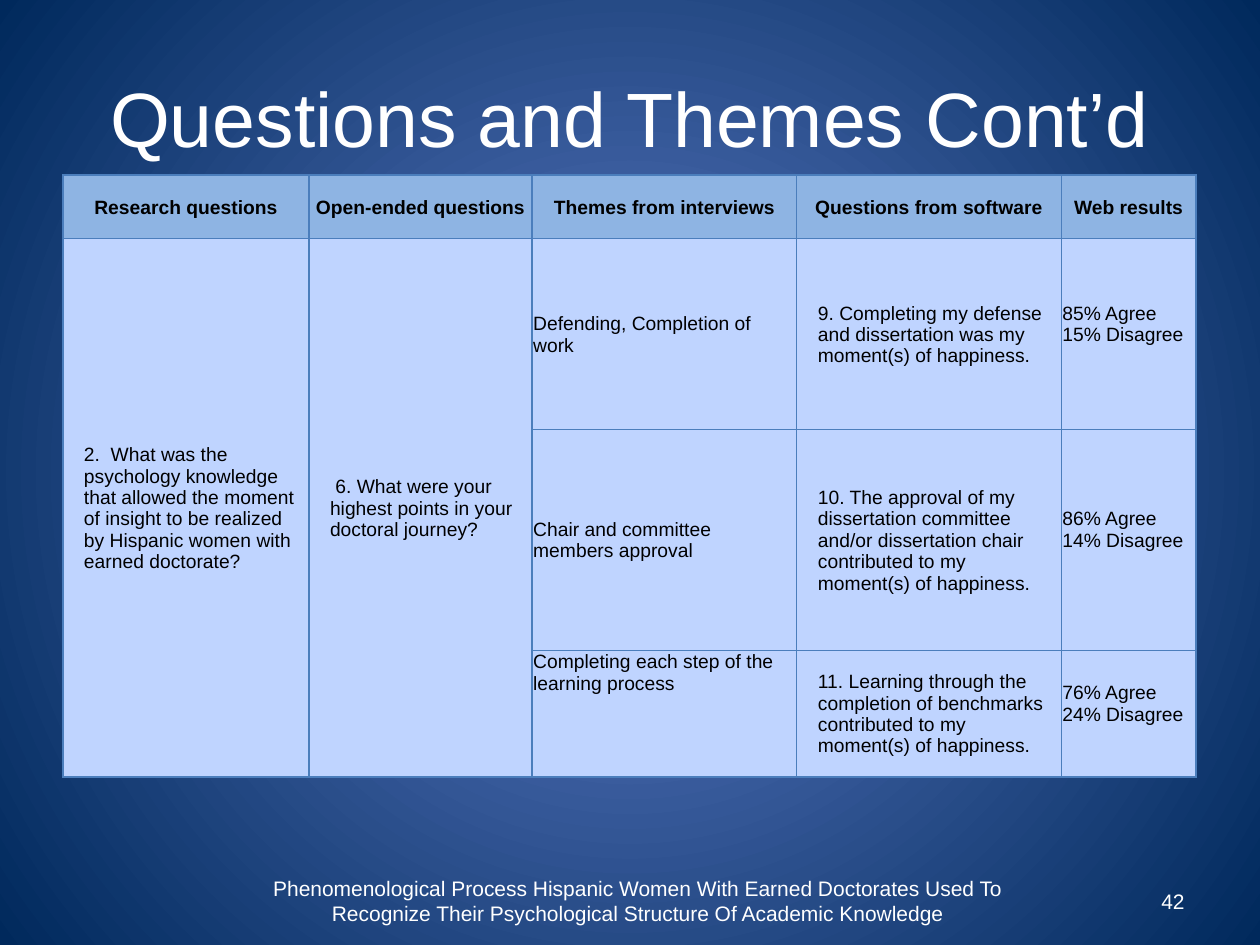
from dataclasses import dataclass

from lxml import etree
from pptx import Presentation
from pptx import util as u
from pptx.dml.color import RGBColor
from pptx.enum import text
from pptx.oxml import ns

TITLE = "Questions and Themes Cont’d"
FOOTER = ("Phenomenological Process Hispanic Women With Earned Doctorates Used To "
          "Recognize Their Psychological Structure Of Academic Knowledge")
PAGE_NUMBER = "42"

HEADERS = ["Research questions", "Open-ended questions", "Themes from interviews",
           "Questions from software", "Web results"]
RESEARCH_QUESTION = ("2.  What was the psychology knowledge that allowed the moment of insight "
                     "to be realized by Hispanic women with earned doctorate?")
OPEN_QUESTION = " 6. What were your highest points in your doctoral journey?"
FINDINGS = [
    ("Defending, Completion of work",
     "9. Completing my defense and dissertation was my moment(s) of happiness.",
     "85% Agree\n15% Disagree"),
    ("Chair and committee members approval",
     "10. The approval of my dissertation committee and/or dissertation chair "
     "contributed to my moment(s) of happiness.",
     "86% Agree\n14% Disagree"),
    ("Completing each step of the learning process",
     "11. Learning through the completion of benchmarks contributed to my "
     "moment(s) of happiness.",
     "76% Agree\n24% Disagree"),
]
COLUMN_WIDTHS = [140.6, 127.4, 151.4, 151, 77.1]
ROW_HEIGHTS = [36.5, 109, 126, 72.5]
INDENTED_COLUMNS = {0, 1, 3}
RESULT_COLUMN = 4


@dataclass(frozen=True)
class Theme:
    font: str = "Arial"
    light: str = "FFFFFF"
    dark: str = "000000"
    glow: str = "5E7CC5"
    edge: str = "00295C"
    header_fill: str = "8EB4E3"
    body_fill: str = "BFD4FF"
    border: str = "4B7EBC"
    title_size: float = 44
    footer_size: float = 12
    table_size: float = 11


THEME = Theme()
ALIGN = text.PP_ALIGN
ANCHOR = text.MSO_ANCHOR


def write(frame, words, size, color, align, bold=False):
    frame.word_wrap = True
    for index, line in enumerate(words.split("\n")):
        para = frame.add_paragraph() if index else frame.paragraphs[0]
        para.alignment = align
        span = para.add_run()
        span.text = line
        span.font.name = THEME.font
        span.font.size = u.Pt(size)
        span.font.bold = bold
        span.font.color.rgb = RGBColor.from_string(color)


def add_text(page, area, words, size, align):
    box = page.shapes.add_textbox(*map(u.Pt, area))
    box.text_frame.vertical_anchor = ANCHOR.MIDDLE
    write(box.text_frame, words, size, THEME.light, align)


def paint_background(page):
    fill = page.background.fill
    fill.gradient()
    for stop, color in zip(fill.gradient_stops, (THEME.glow, THEME.edge)):
        stop.color.rgb = RGBColor.from_string(color)
    gradient = page.background._cSld.find(".//" + ns.qn("a:gradFill"))
    linear = gradient.find(ns.qn("a:lin"))
    circle = etree.Element(ns.qn("a:path"), path="circle")
    etree.SubElement(circle, ns.qn("a:fillToRect"),
                     dict.fromkeys("ltrb", "50000"))
    gradient.replace(linear, circle)


def add_borders(cell):
    properties = cell._tc.get_or_add_tcPr()
    for index, side in enumerate("LRTB"):
        line = etree.Element(ns.qn("a:ln" + side), w=str(u.Pt(0.75)))
        solid = etree.SubElement(line, ns.qn("a:solidFill"))
        etree.SubElement(solid, ns.qn("a:srgbClr"), val=THEME.border)
        properties.insert(index, line)


def add_findings_table(page):
    rows = [HEADERS] + [("", "") + finding for finding in FINDINGS]
    rows[1] = (RESEARCH_QUESTION, OPEN_QUESTION) + FINDINGS[0]
    table = page.shapes.add_table(
        len(rows), len(HEADERS), u.Pt(36), u.Pt(100),
        u.Pt(sum(COLUMN_WIDTHS)), u.Pt(sum(ROW_HEIGHTS))).table
    for column, width in zip(table.columns, COLUMN_WIDTHS):
        column.width = u.Pt(width)
    for row, height in zip(table.rows, ROW_HEIGHTS):
        row.height = u.Pt(height)
    last = len(rows) - 1
    for column in (0, 1):
        table.cell(1, column).merge(table.cell(last, column))
    for r, row in enumerate(rows):
        for c, words in enumerate(row):
            cell = table.cell(r, c)
            header = r == 0
            cell.fill.solid()
            cell.fill.fore_color.rgb = RGBColor.from_string(
                THEME.header_fill if header else THEME.body_fill)
            add_borders(cell)
            cell.margin_left = u.Pt(12 if not header and c in INDENTED_COLUMNS else 0.7)
            cell.margin_right = cell.margin_top = u.Pt(0.7)
            cell.margin_bottom = u.Pt(12 if not header and c == RESULT_COLUMN else 0)
            cell.vertical_anchor = ANCHOR.TOP if (r, c) == (last, 2) else ANCHOR.MIDDLE
            if words:
                write(cell.text_frame, words, THEME.table_size, THEME.dark,
                      ALIGN.CENTER if header else ALIGN.LEFT, header)


def main():
    deck = Presentation()
    deck.slide_width, deck.slide_height = u.Pt(720), u.Pt(540)
    page = deck.slides.add_slide(deck.slide_layouts[6])
    paint_background(page)
    add_text(page, (36, 21.6, 648, 90), TITLE, THEME.title_size, ALIGN.CENTER)
    add_text(page, (122.4, 500.4, 484.5, 28.8), FOOTER, THEME.footer_size, ALIGN.CENTER)
    add_text(page, (516, 500.4, 168, 28.8), PAGE_NUMBER, THEME.footer_size, ALIGN.RIGHT)
    add_findings_table(page)
    deck.save("out.pptx")


if __name__ == "__main__":
    main()
